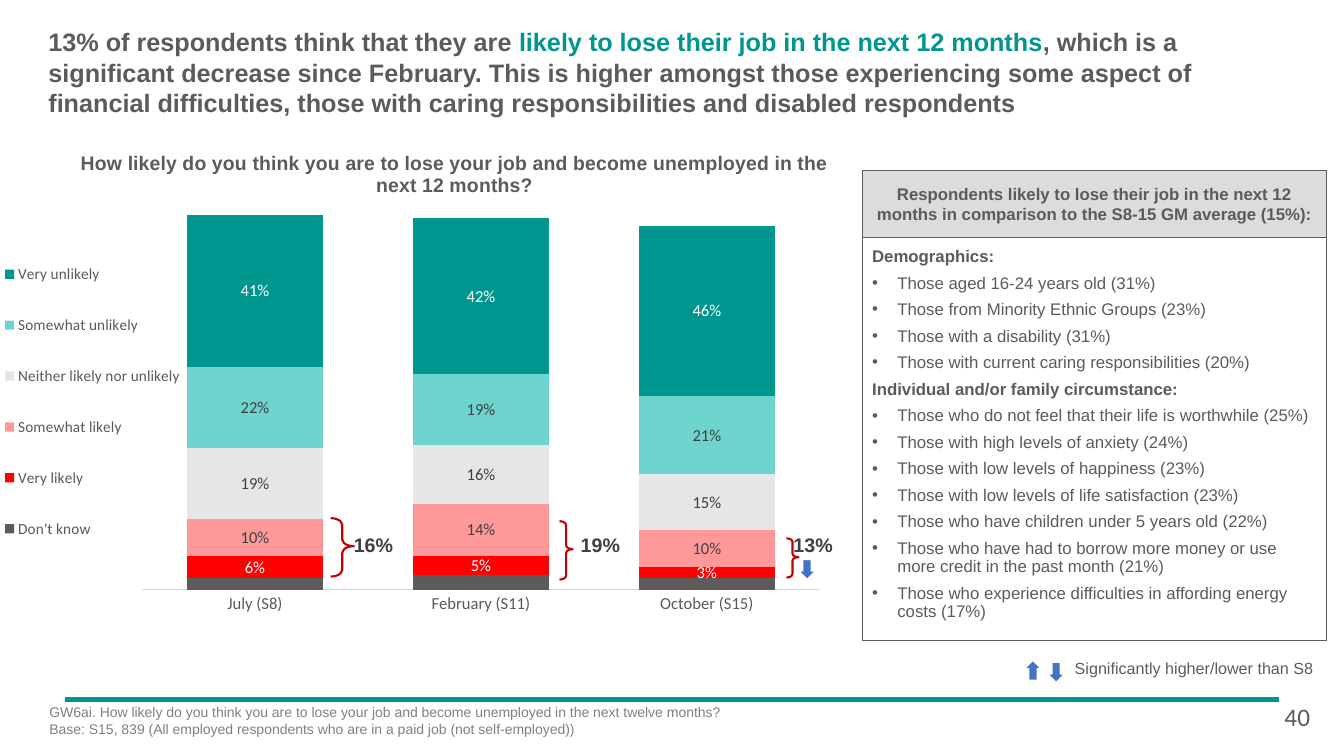
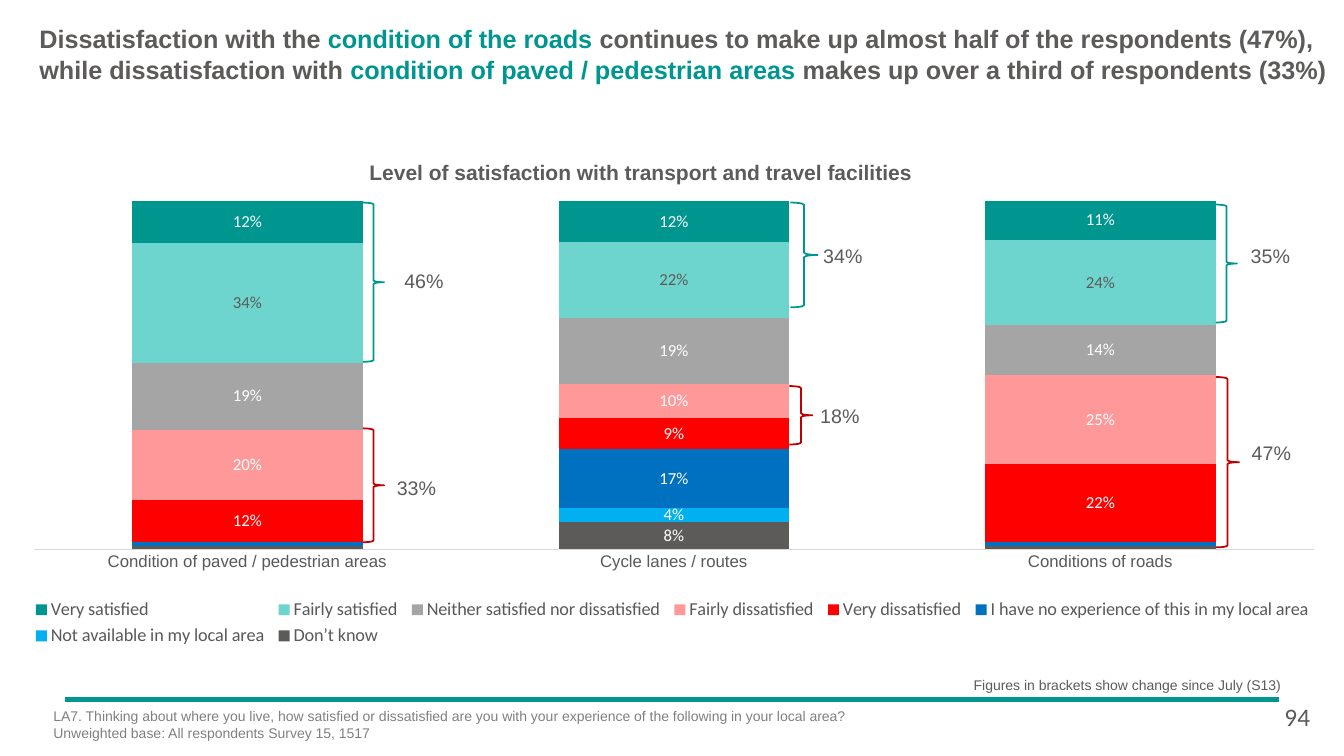
from lxml import etree
from pptx import Presentation
from pptx import util as u
from pptx.chart.data import CategoryChartData
from pptx.dml.color import RGBColor
from pptx.enum import chart as ch, shapes, text
from pptx.oxml import parse_xml
from pptx.oxml.ns import nsdecls, qn

PX = 9144
TEAL = RGBColor(0x00, 0x96, 0x90)
AQUA = RGBColor(0x6D, 0xD5, 0xCE)
PALE_GREY = RGBColor(0xE7, 0xE6, 0xE6)
MID_GREY = RGBColor(0xA5, 0xA5, 0xA5)
AXIS_GREY = RGBColor(0xD9, 0xD9, 0xD9)
AXIS_TEXT = RGBColor(0x59, 0x59, 0x59)
NOTE_GREY = RGBColor(0x80, 0x80, 0x80)
DARK = RGBColor(0x40, 0x40, 0x40)
INK = RGBColor(0x5C, 0x5B, 0x5A)
PINK = RGBColor(0xFF, 0x99, 0x99)
RED = RGBColor(0xFF, 0x00, 0x00)
BRACE_RED = RGBColor(0xC0, 0x00, 0x00)
BLUE = RGBColor(0x00, 0x70, 0xC0)
SKY = RGBColor(0x00, 0xB0, 0xF0)
ARROW_BLUE = RGBColor(0x44, 0x72, 0xC4)
WHITE = RGBColor(0xFF, 0xFF, 0xFF)
LEFT, CENTER = text.PP_ALIGN.LEFT, text.PP_ALIGN.CENTER
TOP, MIDDLE = text.MSO_ANCHOR.TOP, text.MSO_ANCHOR.MIDDLE


def emu(box):
    return [u.Emu(px * PX) for px in box]


def place(shape, box):
    shape.left, shape.top, shape.width, shape.height = emu(box)


def style_font(font, size, color, bold=False, name="Arial"):
    font.size, font.bold, font.name = u.Pt(size), bold, name
    font.color.rgb = color


def add_run(paragraph, words, size, color, bold=False, name="Arial"):
    run = paragraph.add_run()
    run.text = words
    style_font(run.font, size, color, bold, name)


def set_frame(frame, inset=0, anchor=TOP, wrap=True):
    frame.margin_left = frame.margin_right = u.Emu(inset * PX)
    frame.margin_top = frame.margin_bottom = u.Emu(inset * PX)
    frame.vertical_anchor = anchor
    frame.auto_size = text.MSO_AUTO_SIZE.NONE
    frame.word_wrap = wrap


def add_text(slide, box, lines, size, color=INK, bold=False, name="Arial",
             align=LEFT, anchor=TOP):
    frame = slide.shapes.add_textbox(*emu(box)).text_frame
    set_frame(frame, anchor=anchor)
    for number, line in enumerate(lines):
        paragraph = frame.add_paragraph() if number else frame.paragraphs[0]
        paragraph.alignment = align
        add_run(paragraph, line, size, color, bold, name)


def add_shape(slide, preset, box, fill=None, line=INK, width=0.75):
    shape = slide.shapes.add_shape(preset, *emu(box))
    shape.shadow.inherit = False
    if fill is None:
        shape.fill.background()
    else:
        shape.fill.solid()
        shape.fill.fore_color.rgb = fill
    shape.line.color.rgb = line
    shape.line.width = u.Pt(width)
    return shape


def add_brace(slide, box, color, width, bends=None):
    brace = add_shape(slide, shapes.MSO_SHAPE.RIGHT_BRACE, box, None, color, width)
    if bends:
        brace.adjustments[0], brace.adjustments[1] = bends


def add_arrow(slide, left, top, rotation=0):
    arrow = add_shape(slide, shapes.MSO_SHAPE.DOWN_ARROW, (left, top, 17, 20),
                      ARROW_BLUE, WHITE, 1)
    arrow.rotation = rotation


def add_master_rule(prs, slide):
    rule = slide.shapes.add_connector(shapes.MSO_CONNECTOR.STRAIGHT,
                                      *emu((64, 694, 1269, 694)))
    rule.line.color.rgb = TEAL
    rule.line.width = u.Pt(3)
    etree.SubElement(rule.element.spPr, qn("a:effectLst"))
    rule.element.xpath("./p:nvCxnSpPr/p:cNvPr")[0].set("id", "90")
    prs.slide_master.shapes.element.append(rule.element)


def add_heading(slide, box, parts):
    title = slide.shapes.title
    place(title, box)
    frame = title.text_frame
    set_frame(frame, anchor=MIDDLE)
    frame.paragraphs[0].alignment = LEFT
    for words, color in parts:
        add_run(frame.paragraphs[0], words, 18, color, True)


def add_footer(slide, left, top, notes, page):
    add_text(slide, (left, top, 1180, 40), notes, 10, NOTE_GREY)
    add_text(slide, (1274, 696, 40, 32), [page], 18, name="Calibri")


def set_layout(parent, index, box, chart_box, inner=False):
    for old in parent.findall(qn("c:layout")):
        parent.remove(old)
    left, top, width, height = chart_box
    fractions = {"x": (box[0] - left) / width, "y": (box[1] - top) / height}
    if len(box) == 4:
        fractions.update(w=box[2] / width, h=box[3] / height)
    target = '<c:layoutTarget val="inner"/>' if inner else ""
    modes = '<c:xMode val="edge"/><c:yMode val="edge"/>'
    sizes = "".join(f'<c:{key} val="{value:.4f}"/>' for key, value in fractions.items())
    parent.insert(index, parse_xml(
        f'<c:layout {nsdecls("c")}><c:manualLayout>{target}{modes}{sizes}'
        '</c:manualLayout></c:layout>'))


def label_series(series, color, only):
    labels = series.data_labels
    labels.number_format, labels.number_format_is_linked = "0%", False
    labels.show_value = only is None
    labels.position = ch.XL_LABEL_POSITION.CENTER
    style_font(labels.font, 12, color, name="Calibri")
    if only is not None:
        label = series.points[only].data_label
        style_font(label.font, 12, color, name="Calibri")
        label.position = ch.XL_LABEL_POSITION.CENTER


def add_stack(slide, kind, box, plot_box, legend_box, categories, bands, gap,
              axis_font, legend_size, side, top_value):
    data = CategoryChartData(number_format="0%")
    data.categories = categories
    for name, values, *_ in bands:
        data.add_series(name, values)
    chart = slide.shapes.add_chart(kind, *emu(box), data).chart
    chart.has_title = False
    style_font(chart.font, 10, AXIS_TEXT, name="Calibri")
    plot = chart.plots[0]
    plot.gap_width, plot.overlap, plot.vary_by_categories = gap, 100, False
    for series, (_, _, fill, label_color, only) in zip(plot.series, bands):
        series.format.fill.solid()
        series.format.fill.fore_color.rgb = fill
        if label_color is not None:
            label_series(series, label_color, only)
    axis = chart.category_axis
    axis.major_tick_mark = ch.XL_TICK_MARK.NONE
    axis.format.line.color.rgb = AXIS_GREY
    axis.format.line.width = u.Pt(0.75)
    style_font(axis.tick_labels.font, 12, AXIS_TEXT, name=axis_font)
    scale = chart.value_axis
    scale.minimum_scale, scale.maximum_scale = 0, top_value
    scale.has_major_gridlines = False
    scale.visible = False
    chart.has_legend = True
    chart.legend.position = side
    chart.legend.include_in_layout = False
    style_font(chart.legend.font, legend_size, AXIS_TEXT, name="Calibri")
    set_layout(chart.element.xpath("//c:plotArea")[0], 0, plot_box, box, True)
    set_layout(chart.element.xpath("//c:legend")[0], 1, legend_box, box)
    return chart


def add_chart_title(chart, words, corner, chart_box):
    chart.has_title = True
    add_run(chart.chart_title.text_frame.paragraphs[0], words, 14, INK, True)
    set_layout(chart.element.xpath("//c:chart/c:title")[0], 1, corner, chart_box)


def add_panel(slide, heading, groups):
    band = add_shape(slide, shapes.MSO_SHAPE.RECTANGLE, (855, 169, 461, 67), INK)
    etree.SubElement(band.element.xpath("./p:spPr/a:solidFill/a:srgbClr")[0],
                     qn("a:alpha"), val="21000")
    set_frame(band.text_frame, 10, MIDDLE)
    band.text_frame.paragraphs[0].alignment = CENTER
    add_run(band.text_frame.paragraphs[0], heading, 12, INK, True)

    panel = slide.placeholders[1]
    place(panel, (855, 236, 461, 399))
    panel.fill.solid()
    panel.fill.fore_color.rgb = WHITE
    panel.line.color.rgb = INK
    panel.line.width = u.Pt(0.75)
    set_frame(panel.text_frame, 10)
    entries = [(words, level) for group, items in groups
               for words, level in [(group, 0)] + [(item, 1) for item in items]]
    for number, (words, level) in enumerate(entries):
        frame = panel.text_frame
        paragraph = frame.add_paragraph() if number else frame.paragraphs[0]
        props = paragraph._p.get_or_add_pPr()
        props.set("marL", str(25 * PX * level))
        props.set("indent", str(-25 * PX * level))
        if level:
            etree.SubElement(props, qn("a:buFont"), typeface="Arial")
            etree.SubElement(props, qn("a:buChar"), char="•")
        else:
            etree.SubElement(props, qn("a:buNone"))
        paragraph.line_spacing = 0.9
        paragraph.space_before = u.Pt(3 if number else 0)
        paragraph.space_after = u.Pt(3)
        add_run(paragraph, words, 12, INK, level == 0)


def build_job_slide(slide):
    add_heading(slide, (48, 21, 1229, 101), [
        ("13% of respondents think that they are ", INK),
        ("likely to lose their job in the next 12 months", TEAL),
        (", which is a significant decrease since February. This is higher amongst those "
         "experiencing some aspect of financial difficulties, those with caring "
         "responsibilities and disabled respondents", INK)])
    chart_box = (-129, 116, 954, 526)
    chart = add_stack(
        slide, ch.XL_CHART_TYPE.COLUMN_STACKED, chart_box, (144, 143, 680, 442),
        (4, 231, 181, 335), ["October (S15)", "February (S11)", "July (S8)"], [
            ("Don't know", (0.03, 0.04, 0.03), INK, None, None),
            ("Very likely", (0.03, 0.05, 0.06), RED, WHITE, None),
            ("Somewhat likely", (0.1, 0.14, 0.1), PINK, DARK, None),
            ("Neither likely nor unlikely", (0.15, 0.16, 0.19), PALE_GREY, DARK, None),
            ("Somewhat unlikely", (0.21, 0.19, 0.22), AQUA, DARK, None),
            ("Very unlikely", (0.46, 0.42, 0.41), TEAL, WHITE, None)],
        66, "Calibri", 11, ch.XL_LEGEND_POSITION.LEFT, 1.2)
    chart.category_axis.reverse_order = True
    add_chart_title(chart, "How likely do you think you are to lose your job and become "
                    "unemployed in the next 12 months?", (79, 146), chart_box)
    add_panel(slide, "Respondents likely to lose their job in the next 12 months in "
              "comparison to the S8-15 GM average (15%):", [
                  ("Demographics:", [
                      "Those aged 16-24 years old (31%)",
                      "Those from Minority Ethnic Groups (23%)",
                      "Those with a disability (31%)",
                      "Those with current caring responsibilities (20%)"]),
                  ("Individual and/or family circumstance:", [
                      "Those who do not feel that their life is worthwhile (25%)",
                      "Those with high levels of anxiety (24%)",
                      "Those with low levels of happiness (23%)",
                      "Those with low levels of life satisfaction (23%)",
                      "Those who have children under 5 years old (22%)",
                      "Those who have had to borrow more money or use more credit in the "
                      "past month (21%)",
                      "Those who experience difficulties in affording energy costs (17%)"])])
    for brace_box, share_left, share in [((328, 514, 23, 58), 351, "16%"),
                                         ((555, 517, 13, 58), 576, "19%"),
                                         ((780, 534, 12, 39), 787, "13%")]:
        add_brace(slide, brace_box, BRACE_RED, 1.5, (0.29, 0.48))
        add_text(slide, (share_left, 528, 40, 24), [share], 14, DARK, True, anchor=MIDDLE)
    add_arrow(slide, 792, 555)
    add_arrow(slide, 1016, 655, 180)
    add_arrow(slide, 1039, 657)
    add_text(slide, (1066, 648, 250, 29), ["Significantly higher/lower than S8"], 11.5,
             anchor=MIDDLE)
    add_footer(slide, 49, 698, [
        "GW6ai. How likely do you think you are to lose your job and become unemployed in "
        "the next twelve months?",
        "Base: S15, 839 (All employed respondents who are in a paid job (not "
        "self-employed))"], "40")


def build_travel_slide(slide):
    add_heading(slide, (39, 18, 1280, 71), [
        ("Dissatisfaction with the ", INK), ("condition of the roads ", TEAL),
        ("continues to make up almost half of the respondents (47%), while "
         "dissatisfaction with ", INK),
        ("condition of paved / pedestrian areas", TEAL),
        (" makes up over a third of respondents (33%)", INK)])
    add_text(slide, (353, 153, 565, 35),
             ["Level of satisfaction with transport and travel facilities"], 15, bold=True,
             align=CENTER, anchor=MIDDLE)
    add_stack(
        slide, ch.XL_CHART_TYPE.COLUMN_STACKED_100, (15, 182, 1297, 515),
        (34, 199, 1269, 346), (27, 590, 1279, 56),
        ["Condition of paved / pedestrian areas", "Cycle lanes / routes",
         "Conditions of roads"], [
            ("Don’t know", (0.01, 0.08, 0.01), INK, WHITE, 1),
            ("Not available in my local area", (None, 0.04, None), SKY, WHITE, 1),
            ("I have no experience of this in my local area", (0.01, 0.17, 0.01), BLUE,
             WHITE, 1),
            ("Very dissatisfied", (0.12, 0.09, 0.22), RED, WHITE, None),
            ("Fairly dissatisfied", (0.2, 0.1, 0.25), PINK, WHITE, None),
            ("Neither satisfied nor dissatisfied", (0.19, 0.19, 0.14), MID_GREY, WHITE,
             None),
            ("Fairly satisfied", (0.34, 0.22, 0.24), AQUA, INK, None),
            ("Very satisfied", (0.12, 0.12, 0.11), TEAL, WHITE, None)],
        85, "Arial", 13, ch.XL_LEGEND_POSITION.RIGHT, 1)
    for brace_box, color, share_box, share in [
            ((360, 201, 21, 158), TEAL, (377, 261, 87, 34), "46%"),
            ((360, 425, 21, 113), BRACE_RED, (362, 467, 102, 34), "33%"),
            ((784, 201, 27, 104), TEAL, (796, 237, 80, 34), "34%"),
            ((783, 383, 23, 58), BRACE_RED, (784, 395, 98, 34), "18%"),
            ((1206, 203, 21, 117), TEAL, (1215, 237, 90, 34), "35%"),
            ((1206, 374, 23, 169), BRACE_RED, (1210, 432, 102, 34), "47%")]:
        add_brace(slide, brace_box, color, 1.25)
        add_text(slide, share_box, [share], 14, align=CENTER, anchor=MIDDLE)
    add_text(slide, (946, 671, 344, 17),
             ["Figures in brackets show change since July (S13)"], 10, align=CENTER)
    add_footer(slide, 53, 702, [
        "LA7. Thinking about where you live, how satisfied or dissatisfied are you with "
        "your experience of the following in your local area?",
        "Unweighted base: All respondents Survey 15, 1517"], "94")


def main():
    prs = Presentation()
    prs.slide_width, prs.slide_height = emu((1333, 750))
    job_slide = prs.slides.add_slide(prs.slide_layouts[1])
    add_master_rule(prs, job_slide)
    build_job_slide(job_slide)
    build_travel_slide(prs.slides.add_slide(prs.slide_layouts[5]))
    prs.save("out.pptx")


if __name__ == "__main__":
    main()
